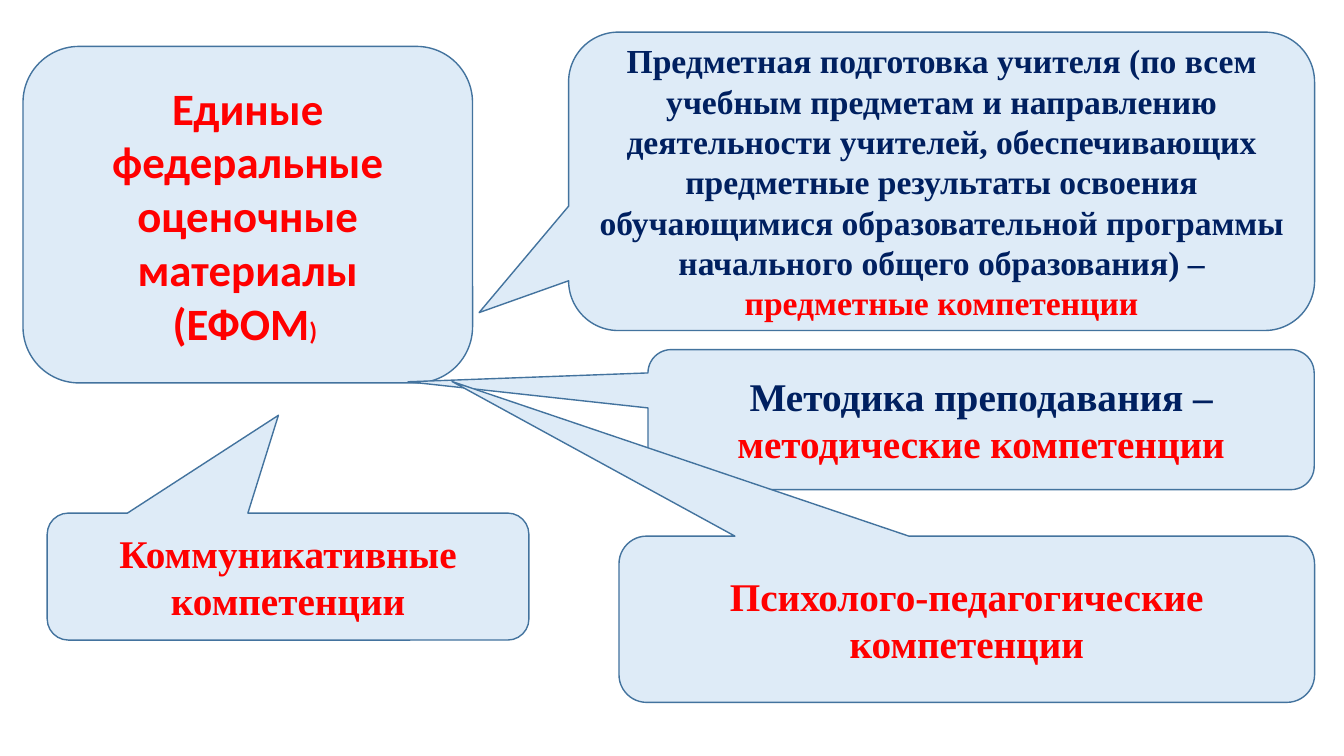
"""Builds a slide of teacher skill callouts around the shared test materials."""
from typing import NamedTuple

from pptx import Presentation
from pptx.dml.color import RGBColor
from pptx.enum.shapes import MSO_SHAPE
from pptx.enum.text import MSO_ANCHOR, PP_ALIGN
from pptx.slide import Slide
from pptx.util import Cm, Pt

PALE = RGBColor(0xDE, 0xEB, 0xF7)
EDGE = RGBColor(0x43, 0x73, 0x9E)
RED = RGBColor(0xFF, 0x00, 0x00)
NAVY = RGBColor(0x00, 0x20, 0x60)
SANS = "Calibri"
SERIF = "Times New Roman"


class Span(NamedTuple):
    text: str
    size: int
    color: RGBColor = RED


class Bubble(NamedTuple):
    left: float
    top: float
    width: float
    height: float
    lines: list[list[Span]]
    tip: tuple[float, float] | None = None
    font: str = SERIF


BUBBLES = [
    Bubble(0.58, 1.17, 11.33, 8.48, [
        [Span("Единые федеральные оценочные материалы", 32)],
        [Span("(ЕФОМ", 32), Span(") ", 18)],
    ], font=SANS),
    Bubble(14.33, 0.81, 18.8, 7.52, [[
        Span("Предметная подготовка учителя (по всем учебным предметам и "
             "направлению деятельности учителей, обеспечивающих предметные "
             "результаты освоения обучающимися образовательной программы "
             "начального общего образования) – ", 24, NAVY),
        Span("предметные компетенции", 24),
    ]], (-0.62, 0.44)),
    Bubble(16.33, 8.81, 16.79, 3.53, [[
        Span("Методика преподавания – ", 28, NAVY),
        Span("методические компетенции", 28),
    ]], (-0.86, -0.27)),
    Bubble(15.6, 13.51, 17.53, 4.19, [
        [Span("Психолого-педагогические компетенции", 28)],
    ], (-0.74, -1.43)),
    Bubble(1.19, 12.93, 12.14, 3.2, [
        [Span("Коммуникативные компетенции", 28)],
    ], (-0.02, -1.27)),
]


def draw(slide: Slide, bubble: Bubble) -> None:
    kind = (MSO_SHAPE.ROUNDED_RECTANGULAR_CALLOUT if bubble.tip
            else MSO_SHAPE.ROUNDED_RECTANGLE)
    shape = slide.shapes.add_shape(kind, Cm(bubble.left), Cm(bubble.top),
                                   Cm(bubble.width), Cm(bubble.height))
    if bubble.tip:
        shape.adjustments[0], shape.adjustments[1] = bubble.tip
    shape.shadow.inherit = False
    shape.fill.solid()
    shape.fill.fore_color.rgb = PALE
    shape.line.color.rgb = EDGE
    shape.line.width = Pt(1)
    frame = shape.text_frame
    frame.word_wrap = True
    frame.vertical_anchor = MSO_ANCHOR.MIDDLE
    for index, line in enumerate(bubble.lines):
        para = frame.add_paragraph() if index else frame.paragraphs[0]
        para.alignment = PP_ALIGN.CENTER
        for span in line:
            run = para.add_run()
            run.text = span.text
            run.font.name = bubble.font
            run.font.size = Pt(span.size)
            run.font.bold = True
            run.font.color.rgb = span.color


def main() -> None:
    deck = Presentation()
    deck.slide_width, deck.slide_height = Cm(33.87), Cm(19.05)
    slide = deck.slides.add_slide(deck.slide_layouts[6])
    for bubble in BUBBLES:
        draw(slide, bubble)
    deck.save("out.pptx")


if __name__ == "__main__":
    main()
